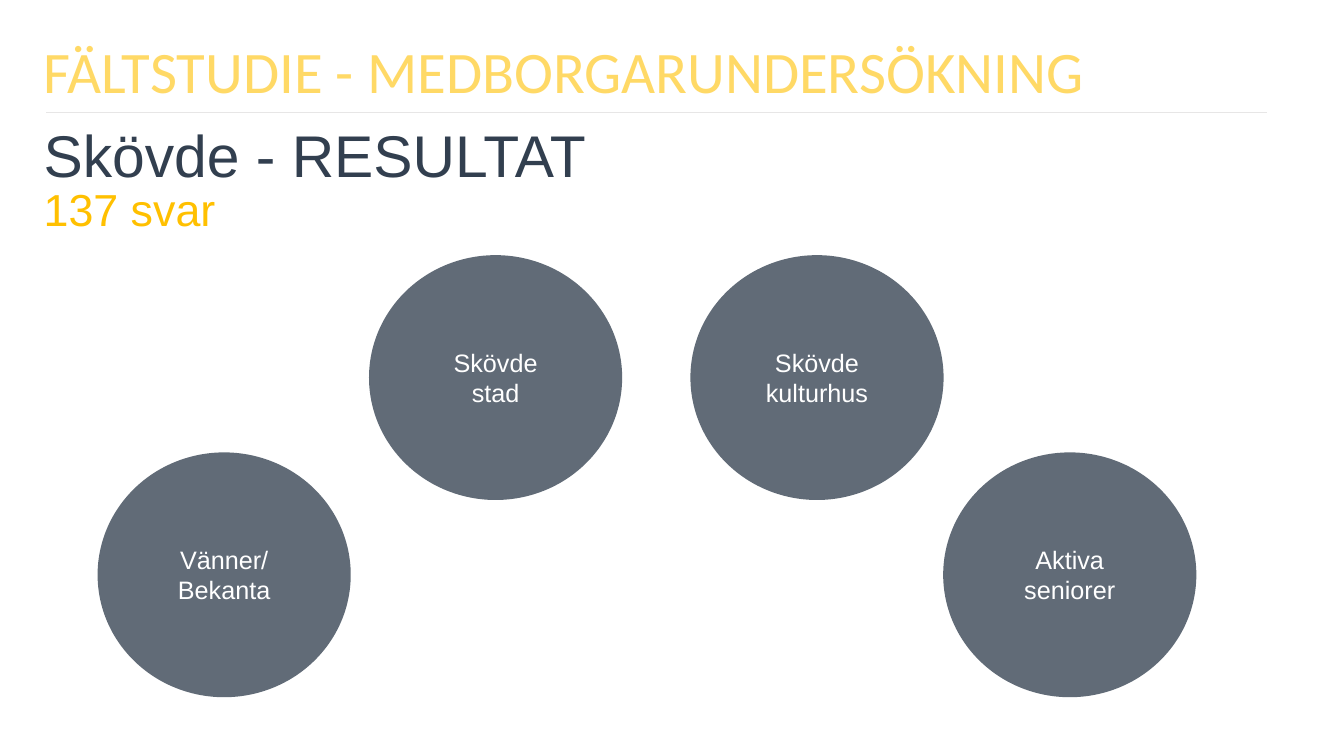
import pptx
import pptx.dml.color
import pptx.enum.shapes
import pptx.enum.text
import pptx.oxml
import pptx.oxml.ns
import pptx.util
import lxml.etree

Cm = pptx.util.Cm


class SurveySlide:
    """Draws the survey result slide in one shared style."""

    colors = {"title": "FFD966", "heading": "323F4F", "count": "FFC000",
              "rule": "E7E6E6", "label": "FFFFFF"}
    circle_width, circle_height = 6.38, 6.17
    circle_opacity = 77

    def __init__(self, presentation):
        self.slide = presentation.slides.add_slide(presentation.slide_layouts[6])

    def color(self, name):
        return pptx.dml.color.RGBColor.from_string(self.colors[name])

    def add_text_run(self, paragraph, text, size, color, font):
        run = paragraph.add_run()
        run.text = text
        run.font.size = pptx.util.Pt(size)
        run.font.name = font
        run.font.color.rgb = self.color(color)

    def add_text(self, box, text, size, color, font="Arial"):
        shape = self.slide.shapes.add_textbox(*map(Cm, box))
        shape.text_frame.word_wrap = True
        self.add_text_run(shape.text_frame.paragraphs[0], text, size, color, font)

    def add_rule(self, left, right, top):
        connector = self.slide.shapes.add_connector(
            pptx.enum.shapes.MSO_CONNECTOR.STRAIGHT, Cm(left), Cm(top), Cm(right), Cm(top))
        connector.line.color.rgb = self.color("rule")
        connector.line.width = pptx.util.Pt(0.75)
        properties = connector._element.spPr
        lxml.etree.SubElement(properties, pptx.oxml.ns.qn("a:effectLst"))

    def add_circle(self, left, top, lines):
        shape = self.slide.shapes.add_shape(
            pptx.enum.shapes.MSO_SHAPE.OVAL, Cm(left), Cm(top),
            Cm(self.circle_width), Cm(self.circle_height))
        shape.shadow.inherit = False
        shape.line.fill.background()
        shape.fill.solid()
        shape.fill.fore_color.rgb = self.color("heading")
        fill_color = shape._element.spPr.find(".//" + pptx.oxml.ns.qn("a:srgbClr"))
        alpha = lxml.etree.SubElement(fill_color, pptx.oxml.ns.qn("a:alpha"))
        alpha.set("val", str(self.circle_opacity * 1000))

        frame = shape.text_frame
        frame.word_wrap = True
        frame.vertical_anchor = pptx.enum.text.MSO_ANCHOR.MIDDLE
        for index, line in enumerate(lines):
            paragraph = frame.add_paragraph() if index else frame.paragraphs[0]
            paragraph.alignment = pptx.enum.text.PP_ALIGN.CENTER
            self.add_text_run(paragraph, line, 18, "label", "Arial")


def main():
    presentation = pptx.Presentation()
    presentation.slide_width = Cm(33.87)
    presentation.slide_height = Cm(19.05)

    survey = SurveySlide(presentation)
    text_left = 0.85
    survey.add_text((text_left, 0.74, 29.51, 3.84), "FÄLTSTUDIE - MEDBORGARUNDERSÖKNING",
                    42, "title", "Calibri")
    survey.add_rule(1.17, 31.93, 2.83)
    survey.add_text((text_left, 2.87, 16.56, 2.06), "Skövde - RESULTAT", 42, "heading")
    survey.add_text((text_left, 4.45, 4.88, 1.63), "137 svar", 32, "count")

    upper, lower = 6.43, 11.4
    for left, top, lines in [
        (9.3, upper, ["Skövde", "stad"]),
        (2.46, lower, ["Vänner/", "Bekanta"]),
        (17.4, upper, ["Skövde kulturhus"]),
        (23.77, lower, ["Aktiva seniorer"]),
    ]:
        survey.add_circle(left, top, lines)

    presentation.save("out.pptx")


if __name__ == "__main__":
    main()
